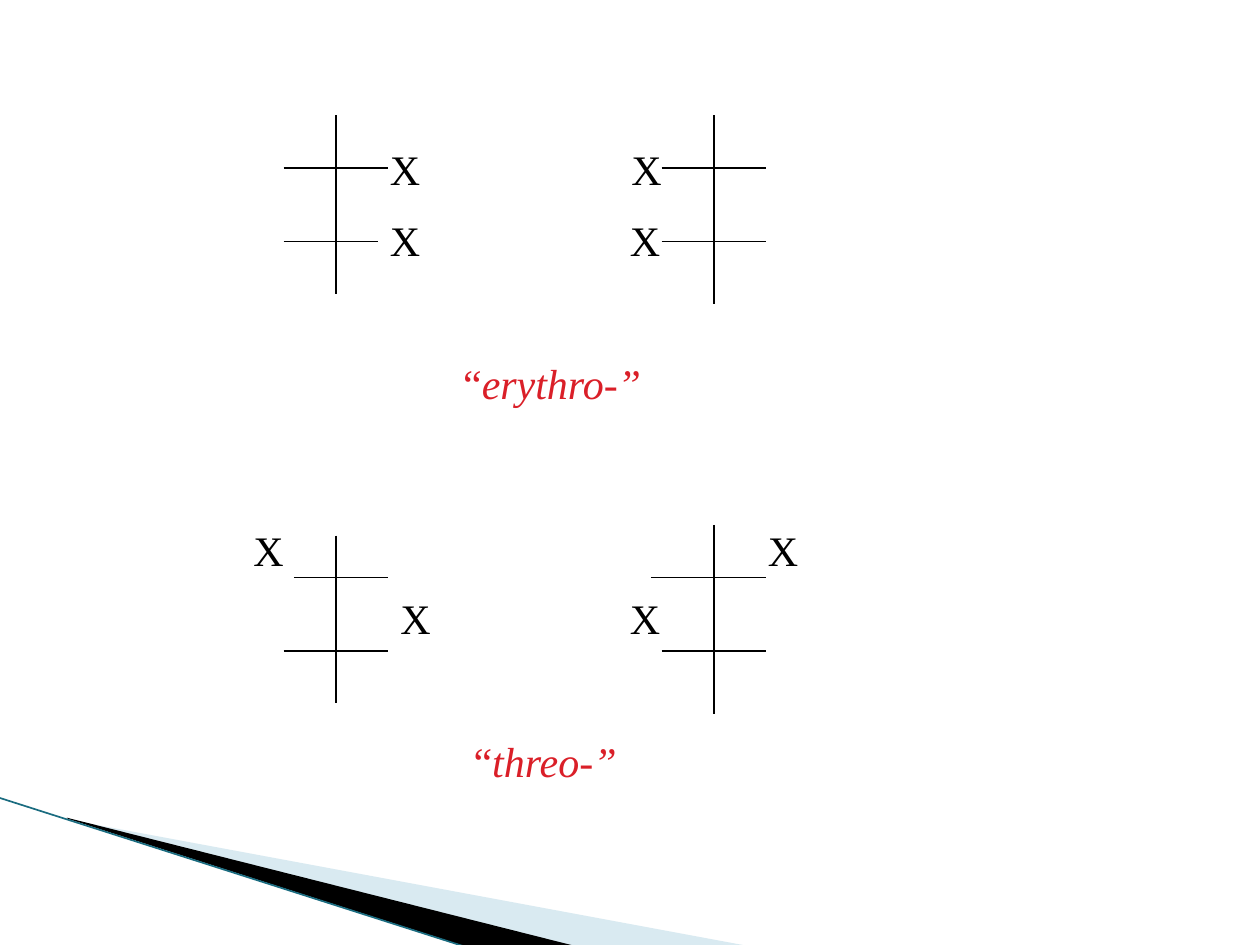
from lxml import etree
from pptx import Presentation
from pptx.dml.color import RGBColor
from pptx.enum.shapes import MSO_CONNECTOR
from pptx.enum.text import MSO_ANCHOR, PP_ALIGN
from pptx.oxml.ns import qn
from pptx.util import Pt

STRAIGHT = MSO_CONNECTOR.STRAIGHT
MIDDLE = MSO_ANCHOR.MIDDLE
CENTER = PP_ALIGN.CENTER

BLACK = RGBColor(0x00, 0x00, 0x00)
RED = RGBColor(0xDA, 0x1F, 0x28)
PALE_BLUE = RGBColor(0xA0, 0xCB, 0xDC)
TEAL = RGBColor(0x1A, 0x6C, 0x80)


class SlideBuilder:
    font_name = "Times New Roman"
    font_size = 24
    label_height = 30

    def __init__(self, slide):
        self.slide = slide

    def line(self, x1, y1, x2, y2, color=BLACK, width=0.75):
        connector = self.slide.shapes.add_connector(
            STRAIGHT, Pt(x1), Pt(y1), Pt(x2), Pt(y2))
        connector.line.color.rgb = color
        connector.line.width = Pt(width)
        etree.SubElement(connector._element.spPr, qn("a:effectLst"))

    def wedge(self, points, color, opacity=100):
        corners = [(Pt(x), Pt(y)) for x, y in points]
        builder = self.slide.shapes.build_freeform(*corners[0])
        builder.add_line_segments(corners[1:], close=True)
        shape = builder.convert_to_shape()
        shape.shadow.inherit = False
        shape.line.fill.background()
        shape.fill.solid()
        shape.fill.fore_color.rgb = color
        if opacity < 100:
            rgb = shape._element.spPr.find(".//" + qn("a:srgbClr"))
            etree.SubElement(rgb, qn("a:alpha"), val=str(opacity * 1000))

    def label(self, center_x, center_y, runs, width, color=BLACK):
        """Place centred text; runs are (text, italic) pairs."""
        box = self.slide.shapes.add_textbox(
            Pt(center_x - width / 2), Pt(center_y - self.label_height / 2),
            Pt(width), Pt(self.label_height))
        frame = box.text_frame
        frame.word_wrap = True
        frame.vertical_anchor = MIDDLE
        frame.margin_left = frame.margin_right = 0
        frame.margin_top = frame.margin_bottom = 0
        paragraph = frame.paragraphs[0]
        paragraph.alignment = CENTER
        paragraph.font.name = self.font_name
        paragraph.font.size = Pt(self.font_size)
        paragraph.font.color.rgb = color
        for text, italic in runs:
            run = paragraph.add_run()
            run.text = text
            run.font.italic = italic

    def fischer(self, stem, bonds, substituents):
        """Draw one projection: a vertical stem, its bonds and its X groups."""
        x, top, bottom = stem
        self.line(x, top, x, bottom)
        for left, right, y in bonds:
            self.line(left, y, right, y)
        for center_x, center_y in substituents:
            self.label(center_x, center_y, [("X", False)], 24)

    def caption(self, center_x, center_y, name):
        self.label(center_x, center_y, [("“", False), (name + "-”", True)],
                   140, RED)


def main():
    presentation = Presentation()
    presentation.slide_width = Pt(720)
    presentation.slide_height = Pt(540)
    slide = presentation.slides.add_slide(presentation.slide_layouts[6])
    builder = SlideBuilder(slide)

    # Corner decoration
    builder.wedge([(39.6, 468.5), (428.4, 540.7), (328.3, 540.7), (39.6, 468)],
                  PALE_BLUE, opacity=40)
    builder.wedge([(38.2, 467.3), (329, 540.7), (267.8, 541.4), (38.9, 468)],
                  BLACK)
    builder.line(-0.7, 455.8, 267.1, 541.4, TEAL, 0.95)

    # Erythro pair: both groups on the same side
    builder.fischer((192, 66, 168), [(162, 222, 96), (162, 216, 138)],
                    [(231.5, 96.5), (231.5, 137)])
    builder.fischer((408, 66, 174), [(378, 438, 96), (378, 438, 138)],
                    [(369.5, 96.5), (368.5, 137)])
    builder.caption(315.5, 218.5, "erythro")

    # Threo pair: groups on opposite sides
    builder.fischer((192, 306, 402), [(168, 222, 330), (162, 222, 372)],
                    [(153.5, 314), (237.5, 353)])
    builder.fischer((408, 300, 408), [(372, 438, 330), (378, 438, 372)],
                    [(447.5, 314), (368.5, 353)])
    builder.caption(311.5, 434.5, "threo")

    presentation.save("out.pptx")


if __name__ == "__main__":
    main()
